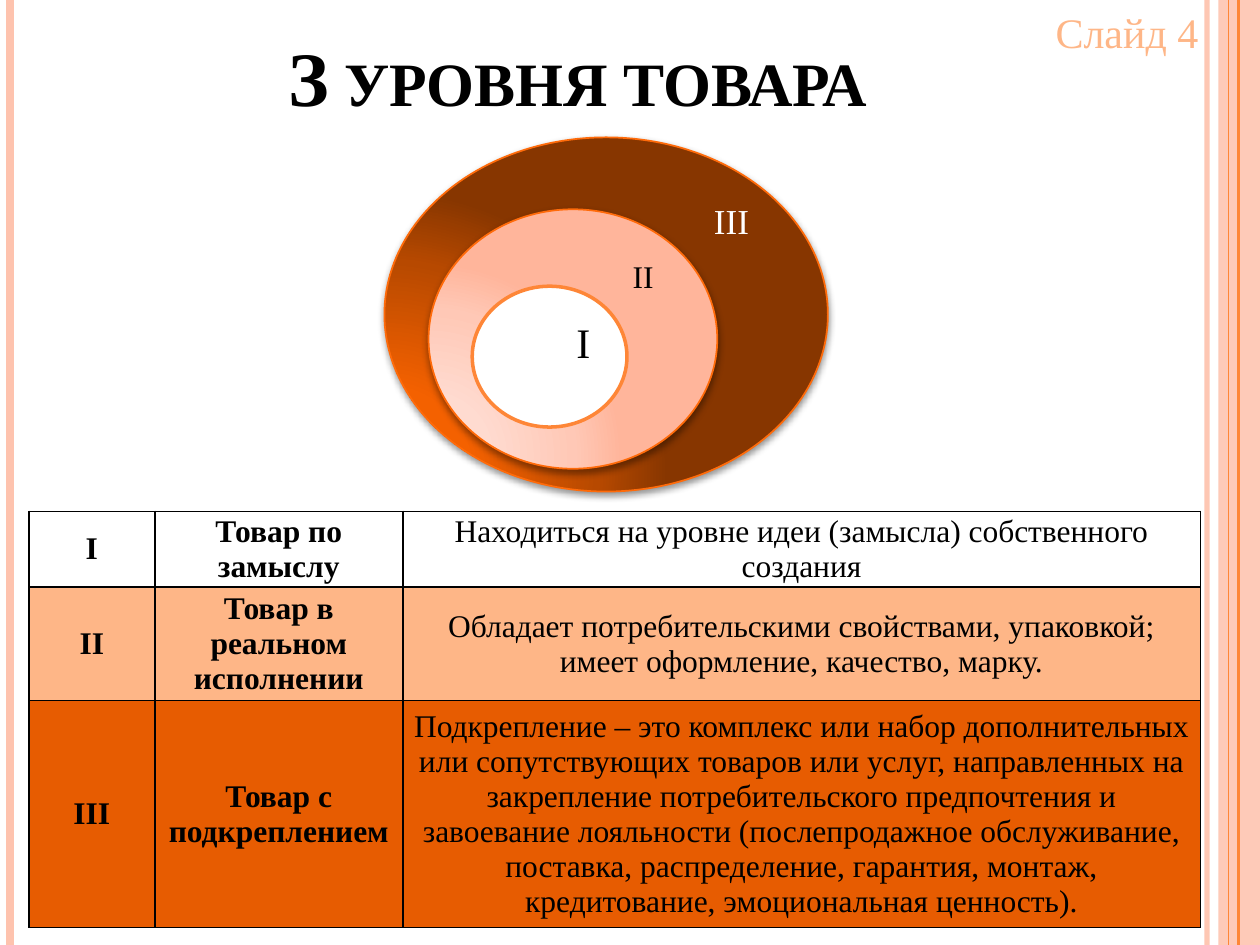
from lxml.etree import SubElement
from pptx import Presentation
from pptx.dml.color import RGBColor
from pptx.enum.shapes import MSO_CONNECTOR, MSO_SHAPE
from pptx.enum.text import MSO_ANCHOR, PP_ALIGN
from pptx.oxml import parse_xml
from pptx.oxml.ns import nsdecls, qn
from pptx.util import Cm, Pt

FONT = "Times New Roman"
HUES = {"black": "000000", "white": "FFFFFF", "pink": "FEC3AE", "orange": "FE8637",
        "rim": "FF6B0A", "peach": "FEB687", "rust": "E75C01"}
TITLE = "З уровня товара"
LABEL = "Слайд 4"
STRIPES = [(24.33, "pink", 3, 93), (0.2, "pink", 4.5, 100),
           (24.97, "orange", 1.5, 100), (24.77, "orange", 0.75, 100)]
DARK = [(0, "FD6400"), (30, "F46100"), (75, "B74900"), (100, "873600")]
PALE = [(0, "FFDED5"), (30, "FFDBD0"), (75, "FFC8B6"), (100, "FFB59B")]
RINGS = [
    ("III", (7.75, 2.77, 8.94, 7.14), 20, "white", DARK, "rim", 1, 0.28, (42, 1.6)),
    ("II", (8.64, 4.22, 5.82, 5.23), 18, "black", PALE, "rim", 1, 0.43, (40, 2)),
    ("I", (9.52, 5.77, 3.12, 2.84), 24, "black", None, "orange", 2, 0.28, None),
]
COLS = [2.54, 5, 16.08]
ROWS = [
    (1.52, "white", ("I", "Товар по замыслу",
                     "Находиться на уровне идеи (замысла) собственного создания")),
    (2.29, "peach", ("II", "Товар в реальном исполнении",
                     "Обладает потребительскими свойствами, упаковкой; "
                     "имеет оформление, качество, марку.")),
    (4.57, "rust", ("III", "Товар с подкреплением",
                    "Подкрепление – это комплекс или набор дополнительных или "
                    "сопутствующих товаров или услуг, направленных на закрепление "
                    "потребительского предпочтения и завоевание лояльности "
                    "(послепродажное обслуживание, поставка, распределение, гарантия, "
                    "монтаж, кредитование, эмоциональная ценность).")),
]


def hue(name):
    return RGBColor.from_string(HUES[name])


def box(*sides):
    return [Cm(side) for side in sides]


def write(frame, text, size, color, align, bold=False):
    frame.word_wrap = True
    frame.text = text
    para = frame.paragraphs[0]
    para.alignment = align
    font = para.font
    font.name, font.size, font.bold = FONT, Pt(size), bold
    font.color.rgb = hue(color)
    return para


def fade(node, alpha):
    SubElement(node.find(".//" + qn("a:srgbClr")), qn("a:alpha"), val=str(alpha * 1000))


def blend(shape, stops):
    marks = "".join(f'<a:gs pos="{pos * 1000}"><a:srgbClr val="{color}"/></a:gs>'
                    for pos, color in stops)
    shape.fill.background()
    old = shape._element.spPr.find(qn("a:noFill"))
    old.getparent().replace(old, parse_xml(
        f'<a:gradFill {nsdecls("a")} rotWithShape="1"><a:gsLst>{marks}</a:gsLst>'
        '<a:path path="circle"><a:fillToRect l="5000" t="100000" r="120000" b="10000"/>'
        '</a:path></a:gradFill>'))


def shade(shape, alpha, dist):
    shape._element.spPr.find(qn("a:effectLst")).append(parse_xml(
        f'<a:outerShdw {nsdecls("a")} blurRad="{Pt(4)}" dist="{Pt(dist)}" dir="5400000" '
        f'rotWithShape="0"><a:srgbClr val="{HUES["black"]}">'
        f'<a:alpha val="{alpha * 1000}"/></a:srgbClr></a:outerShdw>'))


def edge(cell):
    props = cell._tc.get_or_add_tcPr()
    for side in ("lnL", "lnR", "lnT", "lnB"):
        props.append(parse_xml(
            f'<a:{side} {nsdecls("a")} w="{Pt(1)}"><a:solidFill>'
            f'<a:srgbClr val="{HUES["black"]}"/></a:solidFill></a:{side}>'))


def frame_page(shapes):
    for left, color, width, alpha in STRIPES:
        line = shapes.add_connector(MSO_CONNECTOR.STRAIGHT, *box(left, 0, left, 19.05))
        line.line.color.rgb = hue(color)
        line.line.width = Pt(width)
        fade(line._element.spPr, alpha)
        SubElement(line._element.spPr, qn("a:effectLst"))
    band = shapes.add_shape(MSO_SHAPE.RECTANGLE, *box(24.56, 0, 0.84, 19.05))
    band.shadow.inherit = False
    band.fill.solid()
    band.fill.fore_color.rgb = hue("pink")
    band.line.fill.background()
    fade(band._element.spPr, 87)
    shapes._spTree.insert(2, band._element)


def add_rings(shapes):
    for text, place, size, color, stops, rim, width, inset, shadow in RINGS:
        ring = shapes.add_shape(MSO_SHAPE.OVAL, *box(*place))
        ring.shadow.inherit = False
        if stops:
            blend(ring, stops)
        else:
            ring.fill.solid()
            ring.fill.fore_color.rgb = hue("white")
        ring.line.color.rgb = hue(rim)
        ring.line.width = Pt(width)
        if shadow:
            shade(ring, *shadow)
        frame = ring.text_frame
        frame.vertical_anchor = MSO_ANCHOR.TOP
        frame.margin_right, frame.margin_top = box(inset, 0.2)
        write(frame, text, size, color, PP_ALIGN.RIGHT)


def add_levels(shapes):
    high = sum(row[0] for row in ROWS)
    table = shapes.add_table(len(ROWS), len(COLS), *box(0.58, 10.31, sum(COLS), high)).table
    for col, width in zip(table.columns, COLS):
        col.width = Cm(width)
    for row, (height, color, texts) in zip(table.rows, ROWS):
        row.height = Cm(height)
        for spot, (cell, text) in enumerate(zip(row.cells, texts)):
            edge(cell)
            cell.fill.solid()
            cell.fill.fore_color.rgb = hue(color)
            cell.vertical_anchor = MSO_ANCHOR.MIDDLE
            cell.margin_left = cell.margin_right = Cm(0.18)
            cell.margin_top = cell.margin_bottom = 0
            write(cell.text_frame, text, 18, "black", PP_ALIGN.CENTER, spot < 2)


def main():
    deck = Presentation()
    deck.slide_width, deck.slide_height = box(25.4, 19.05)
    slide = deck.slides.add_slide(deck.slide_layouts[5])
    shapes = slide.shapes
    frame_page(shapes)
    title = shapes.title
    title.left, title.top, title.width, title.height = box(1.27, 0.2, 20.75, 2.39)
    title.text_frame.vertical_anchor = MSO_ANCHOR.BOTTOM
    para = write(title.text_frame, TITLE, 44, "black", PP_ALIGN.CENTER, True)
    para.runs[0]._r.get_or_add_rPr().set("cap", "small")
    label = shapes.add_textbox(*box(19.63, 0, 4.78, 1.3))
    write(label.text_frame, LABEL, 24, "peach", PP_ALIGN.RIGHT)
    add_rings(shapes)
    add_levels(shapes)
    deck.save("out.pptx")


if __name__ == "__main__":
    main()
